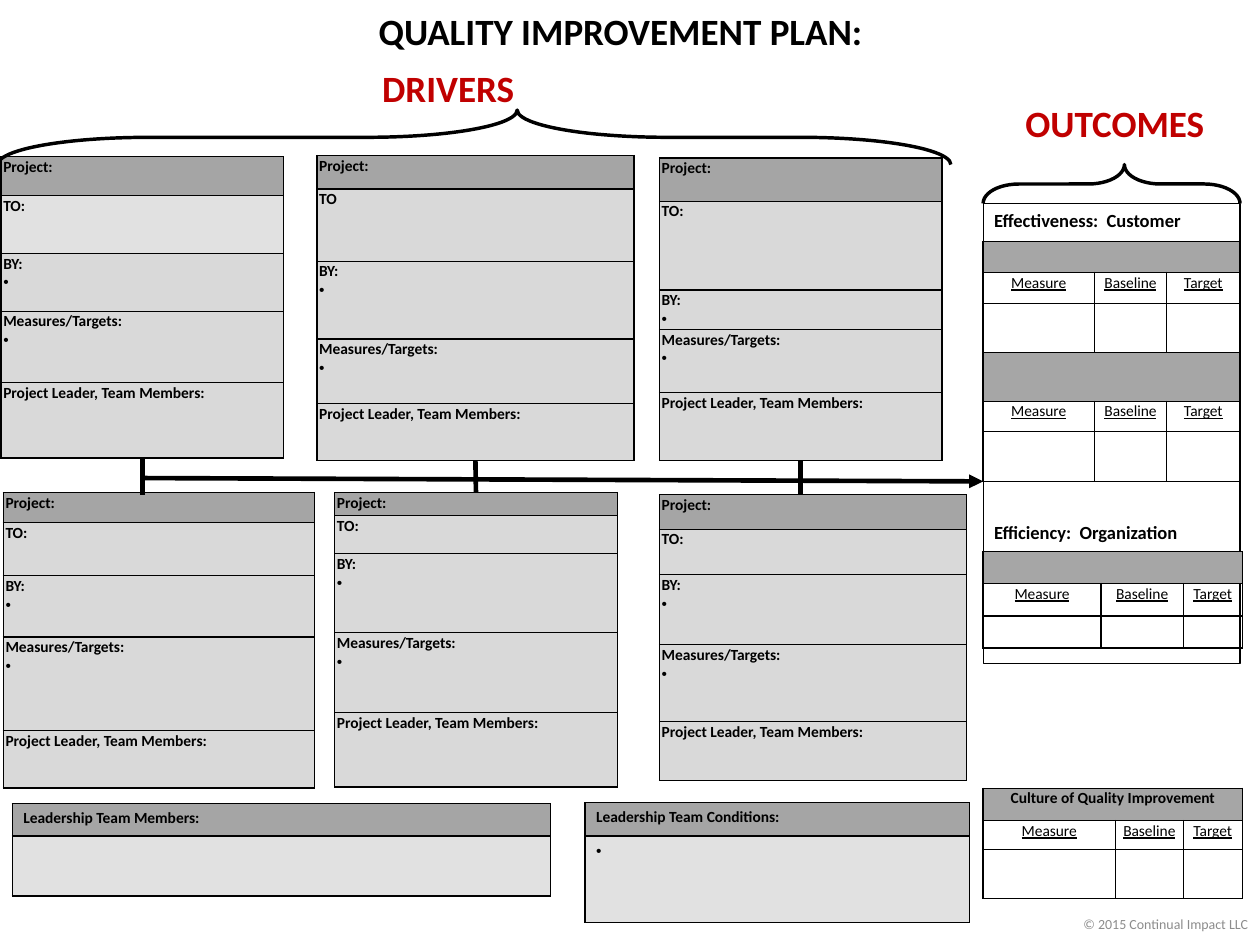
from lxml.etree import SubElement
from pptx import Presentation
from pptx.dml.color import RGBColor
from pptx.enum.shapes import MSO_CONNECTOR, MSO_SHAPE
from pptx.enum.text import MSO_ANCHOR as Anchor, MSO_AUTO_SIZE, PP_ALIGN as Align
from pptx.oxml.ns import qn
from pptx.util import Inches, Pt

BLACK = RGBColor(0x00, 0x00, 0x00)
WHITE = RGBColor(0xFF, 0xFF, 0xFF)
RED = RGBColor(0xC0, 0x00, 0x00)
FOOTER_GRAY = RGBColor(0x8C, 0x8C, 0x8C)
HEADER_GRAY = RGBColor(0xA5, 0xA5, 0xA5)
BAND_GRAY = RGBColor(0xA6, 0xA6, 0xA6)
BODY_GRAY = RGBColor(0xD9, 0xD9, 0xD9)
PALE_GRAY = RGBColor(0xE1, 0xE1, 0xE1)

BULLET = " "  # a line that shows only its bullet
TIGHT = (0.02, 0.01)
ROOMY = (0.1, 0.05)
HEADING = {"size": Pt(24), "bold": True}
LABEL = {"size": Pt(10), "bold": True}
COLUMN_HEAD = {"size": Pt(10), "bold": False, "underline": True}


def apply(target, values):
    for name, value in values.items():
        setattr(target, name, value)


class PlanSlide:
    font_name = "Calibri"

    def __init__(self, slide):
        self.slide = slide
        self.shapes = slide.shapes

    def fill_text(self, frame, lines, font, color=BLACK, align=Align.LEFT):
        for index, line in enumerate(lines):
            paragraph = frame.paragraphs[0] if index == 0 else frame.add_paragraph()
            paragraph.alignment = align
            if line == BULLET:
                props = paragraph._p.get_or_add_pPr()
                props.set("marL", str(Inches(0.19)))
                props.set("indent", str(-Inches(0.19)))
                SubElement(props, qn("a:buFont"), typeface="Arial")
                SubElement(props, qn("a:buChar"), char="•")
            if line:
                run = paragraph.add_run()
                run.text = line
                apply(run.font, {"name": self.font_name, **font})
                run.font.color.rgb = color
            else:
                paragraph._p.get_or_add_endParaRPr().set("sz", "1000")

    def title(self, text, left, top, width, height):
        title = self.shapes.title
        apply(title, {"left": Inches(left), "top": Inches(top),
                      "width": Inches(width), "height": Inches(height)})
        apply(title.text_frame, {"auto_size": MSO_AUTO_SIZE.NONE, "margin_right": Inches(0.25),
                                 "vertical_anchor": Anchor.TOP})
        self.fill_text(title.text_frame, [text], HEADING, align=Align.CENTER)

    def text(self, text, left, top, width, height, font, color, align, anchor=Anchor.TOP):
        box = self.shapes.add_textbox(*map(Inches, (left, top, width, height)))
        apply(box.text_frame, {"word_wrap": True, "vertical_anchor": anchor})
        self.fill_text(box.text_frame, [text], font, color, align)

    def outline(self, kind, left, top, width, height, weight):
        shape = self.shapes.add_shape(kind, *map(Inches, (left, top, width, height)))
        shape.shadow.inherit = False
        shape.fill.background()
        shape.line.color.rgb = BLACK
        shape.line.width = Pt(weight)
        return shape

    def brace(self, left, top, width, height, curve, tip):
        brace = self.outline(MSO_SHAPE.LEFT_BRACE, left, top, width, height, 2.25)
        brace.rotation = 90
        brace.adjustments[0] = curve
        brace.adjustments[1] = tip

    def line(self, start, end, source=None, target=None, arrow=False):
        line = self.shapes.add_connector(MSO_CONNECTOR.STRAIGHT, *map(Inches, start + end))
        if source is not None:
            line.begin_connect(source, 2)
        if target is not None:
            line.end_connect(target, 0)
        line.line.color.rgb = BLACK
        line.line.width = Pt(3)
        if arrow:
            SubElement(line.line._get_or_add_ln(), qn("a:tailEnd"), type="triangle")
        SubElement(line._element.spPr, qn("a:effectLst"))

    def table(self, left, top, widths, heights):
        size = (left, top, sum(widths), sum(heights))
        frame = self.shapes.add_table(len(heights), len(widths), *map(Inches, size))
        table = frame.table
        apply(table, {"first_row": False, "horz_banding": False})
        for column, width in zip(table.columns, widths):
            column.width = Inches(width)
        for row, height in zip(table.rows, heights):
            row.height = Inches(height)
        return frame

    def cell(self, cell, lines, font, fill=None, align=Align.LEFT, margins=TIGHT):
        side, end = map(Inches, margins)
        apply(cell, {"margin_left": side, "margin_right": side,
                     "margin_top": end, "margin_bottom": end})
        for edge in ("a:lnL", "a:lnR", "a:lnT", "a:lnB"):
            border = SubElement(cell._tc.get_or_add_tcPr(), qn(edge), w=str(Pt(1)))
            SubElement(SubElement(border, qn("a:solidFill")), qn("a:srgbClr"), val=str(BLACK))
        if fill is None:
            cell.fill.background()
        else:
            cell.fill.solid()
            cell.fill.fore_color.rgb = fill
        self.fill_text(cell.text_frame, lines, font, align=align)

    def card(self, left, top, width, heights, rows, fills, margins=TIGHT):
        frame = self.table(left, top, [width], heights)
        for index, (lines, fill) in enumerate(zip(rows, fills)):
            self.cell(frame.table.cell(index, 0), lines, LABEL, fill, margins=margins)
        return frame

    def measures(self, left, top, widths, heights, caption=""):
        """Groups of three rows: gray band, column heads, blank values."""
        table = self.table(left, top, widths, heights).table
        for row in range(len(heights)):
            part = row % 3
            texts = [(caption, "", ""), ("Measure", "Baseline", "Target"), ("", "", "")][part]
            for column, text in enumerate(texts):
                self.cell(table.cell(row, column), [text], COLUMN_HEAD if part else LABEL,
                          None if part else BAND_GRAY, Align.CENTER)
            if part == 0:
                table.cell(row, 0).merge(table.cell(row, 2))


def main():
    deck = Presentation()
    deck.slide_width, deck.slide_height = Inches(11.33), Inches(8.5)
    plan = PlanSlide(deck.slides.add_slide(deck.slide_layouts[5]))
    plan.slide.background.fill.solid()
    plan.slide.background.fill.fore_color.rgb = WHITE

    # Headings
    plan.title("QUALITY IMPROVEMENT PLAN:", -0.01, 0.03, 11.33, 0.5)
    plan.text("OUTCOMES", 9.11, 0.85, 1.83, 0.5, HEADING, RED, Align.CENTER)
    plan.text("DRIVERS", 3.33, 0.54, 1.4, 0.5, HEADING, RED, Align.CENTER)

    # Outcomes column
    outcomes = plan.outline(MSO_SHAPE.RECTANGLE, 8.84, 1.83, 2.31, 4.14, 0.75).text_frame
    outcomes.vertical_anchor = Anchor.TOP
    plan.fill_text(outcomes, ["Effectiveness:  Customer", "Efficiency:  Organization"],
                   {"size": Pt(12), "bold": True})
    outcomes.paragraphs[1].space_before = Pt(188)
    plan.measures(8.84, 4.96, [1.06, 0.74, 0.53], [0.29, 0.29, 0.29])
    plan.measures(8.84, 2.17, [1, 0.65, 0.66], [0.28, 0.28, 0.44, 0.44, 0.27, 0.45])
    plan.measures(8.84, 7.09, [1.19, 0.61, 0.53], [0.29, 0.26, 0.44],
                  "Culture of Quality Improvement")

    # Project cards: left, top, width, row heights, goal label, goal fill
    projects = [
        (0.01, 1.41, 2.54, [0.35, 0.52, 0.52, 0.64, 0.68], "TO:", PALE_GRAY),
        (2.85, 1.4, 2.85, [0.3, 0.65, 0.7, 0.58, 0.51], "TO", BODY_GRAY),
        (5.93, 1.42, 2.54, [0.39, 0.8, 0.35, 0.57, 0.61], "TO:", BODY_GRAY),
        (0.03, 4.43, 2.8, [0.27, 0.48, 0.55, 0.84, 0.52], "TO:", BODY_GRAY),
        (3.01, 4.43, 2.54, [0.21, 0.34, 0.71, 0.72, 0.67], "TO:", BODY_GRAY),
        (5.93, 4.45, 2.76, [0.31, 0.41, 0.63, 0.69, 0.53], "TO:", BODY_GRAY),
    ]
    cards = []
    for left, top, width, heights, goal, goal_fill in projects:
        rows = [["Project:"], [goal], ["BY:", BULLET], ["Measures/Targets:", BULLET],
                ["Project Leader, Team Members:"]]
        fills = [HEADER_GRAY, goal_fill] + [BODY_GRAY] * 3
        cards.append(plan.card(left, top, width, heights, rows, fills))

    # Leadership team
    team_fills = [HEADER_GRAY, PALE_GRAY]
    plan.card(0.11, 7.23, 4.84, [0.29, 0.54], [["Leadership Team Members:"], [""]],
              team_fills, ROOMY)
    plan.card(5.26, 7.22, 3.46, [0.3, 0.78], [["Leadership Team Conditions:"], [BULLET]],
              team_fills, ROOMY)

    # Braces and flow from drivers to outcomes
    plan.brace(4.02, -3.05, 0.49, 8.57, 2.76, 0.455)
    plan.brace(9.82, 0.5, 0.35, 2.31, 0.92, 0.45)
    plan.line((1.3, 4.3), (8.84, 4.33), arrow=True)
    plan.line((1.28, 4.12), (1.28, 4.45), cards[0])
    plan.line((4.27, 4.13), (4.29, 4.43), cards[1], cards[4])
    plan.line((7.2, 4.15), (7.2, 4.45), cards[2])

    # Copyright
    plan.text("© 2015 Continual Impact LLC", 8.19, 8.03, 3.13, 0.57, {"size": Pt(9)},
              FOOTER_GRAY, Align.RIGHT, Anchor.MIDDLE)
    deck.save("out.pptx")


if __name__ == "__main__":
    main()
